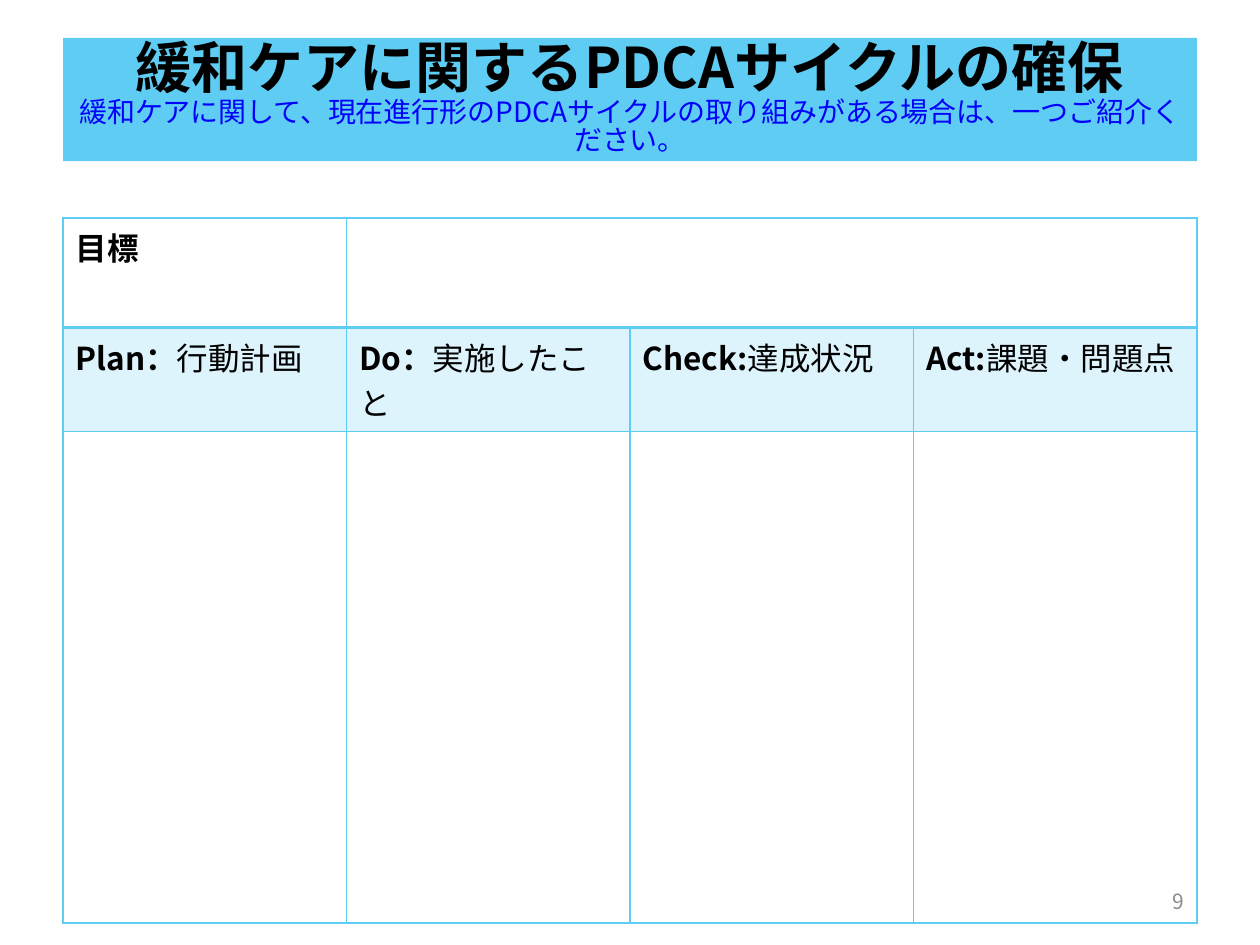
import pptx
import pptx.util
import pptx.dml.color
import pptx.enum.text
import pptx.oxml
import pptx.oxml.ns
import lxml.etree

FONT = "Noto Sans CJK JP"
SKY = "5ECCF3"
WIDE, HIGH = 10, 7.5
EDGE = WIDE * 0.05
SPAN = WIDE - 2 * EDGE
COLS = 4
ROWS = [0.87, 0.47, 3.9]
HEADS = [("Plan：", "行動計画"), ("Do：", "実施したこと"),
         ("Check:", "達成状況"), ("Act:", "課題・問題点")]
ALIGN = pptx.enum.text.PP_ALIGN
MIDDLE = pptx.enum.text.MSO_ANCHOR.MIDDLE
NONE = pptx.enum.text.MSO_AUTO_SIZE.NONE
inch = pptx.util.Inches


def paint(color, tone):
    color.rgb = pptx.dml.color.RGBColor.from_string(tone)


def style(item, form):
    for name, value in form.items():
        setattr(item, name, value)


def sub(node, tag, **attrs):
    child = lxml.etree.SubElement(node, pptx.oxml.ns.qn(tag))
    for name, value in attrs.items():
        child.set(name, str(value))
    return child


def write(para, text, size, tone="000000", bold=False):
    run = para.add_run()
    run.text = text
    style(run.font, {"name": FONT, "size": pptx.util.Pt(size), "bold": bold})
    paint(run.font.color, tone)
    sub(run.font._element, "a:ea", typeface=FONT)


def place(shape, left, top, width, height):
    style(shape, {"left": inch(left), "top": inch(top),
                  "width": inch(width), "height": inch(height)})


def add_title(slide):
    title = slide.shapes.title
    place(title, EDGE, HIGH * 0.04, SPAN, 0.98)
    title.fill.solid()
    paint(title.fill.fore_color, SKY)
    style(title.text_frame, {"word_wrap": True, "auto_size": NONE,
                             "vertical_anchor": MIDDLE})
    para = title.text_frame.paragraphs[0]
    style(para, {"alignment": ALIGN.CENTER, "line_spacing": 0.85})
    write(para, "緩和ケアに関するPDCAサイクルの確保", 32, bold=True)
    para.add_line_break()
    write(para, "緩和ケアに関して、現在進行形のPDCAサイクルの取り組みがある場合は、"
          "一つご紹介ください。", 16, "0000FF")


def add_page(slide):
    box = slide.shapes.add_textbox(inch(7.17), inch(6.95), inch(2.33), inch(0.4))
    style(box.text_frame, {"word_wrap": True, "vertical_anchor": MIDDLE})
    para = box.text_frame.paragraphs[0]
    para.alignment = ALIGN.RIGHT
    write(para, "9", 12, "8C8C8C")


def frame(cell, row):
    thick = {"T": 2 if row == 1 else 1, "B": 2 if row == 0 else 1}
    props = cell._tc.get_or_add_tcPr()
    for side in "LRTB":
        line = sub(props, "a:ln" + side, w=pptx.util.Pt(thick.get(side, 1)))
        sub(sub(line, "a:solidFill"), "a:srgbClr", val=SKY)


def tint(cell, share):
    cell.fill.solid()
    paint(cell.fill.fore_color, SKY)
    tone = cell._tc.tcPr.find(".//" + pptx.oxml.ns.qn("a:solidFill")
                              + "[last()]/" + pptx.oxml.ns.qn("a:srgbClr"))
    fill = cell._tc.tcPr.findall(pptx.oxml.ns.qn("a:solidFill"))[-1]
    tone = fill.find(pptx.oxml.ns.qn("a:srgbClr"))
    sub(tone, "a:alpha", val=share * 1000)


def add_grid(slide):
    grid = slide.shapes.add_table(len(ROWS), COLS, inch(EDGE), inch(1.73),
                                  inch(SPAN), inch(sum(ROWS))).table
    style(grid, {"first_row": False, "horz_banding": False})
    for row, high in enumerate(ROWS):
        grid.rows[row].height = inch(high)
        for col in range(COLS):
            cell = grid.cell(row, col)
            frame(cell, row)
            if row == 1:
                tint(cell, 20)
            else:
                cell.fill.background()
    grid.cell(0, 1).merge(grid.cell(0, COLS - 1))
    write(grid.cell(0, 0).text_frame.paragraphs[0], "目標", 18, bold=True)
    for col, (head, rest) in enumerate(HEADS):
        para = grid.cell(1, col).text_frame.paragraphs[0]
        write(para, head, 18, bold=True)
        write(para, rest, 18)


def main():
    deck = pptx.Presentation()
    style(deck, {"slide_width": inch(WIDE), "slide_height": inch(HIGH)})
    slide = deck.slides.add_slide(deck.slide_layouts[5])
    add_title(slide)
    add_grid(slide)
    add_page(slide)
    deck.save("out.pptx")


if __name__ == "__main__":
    main()
